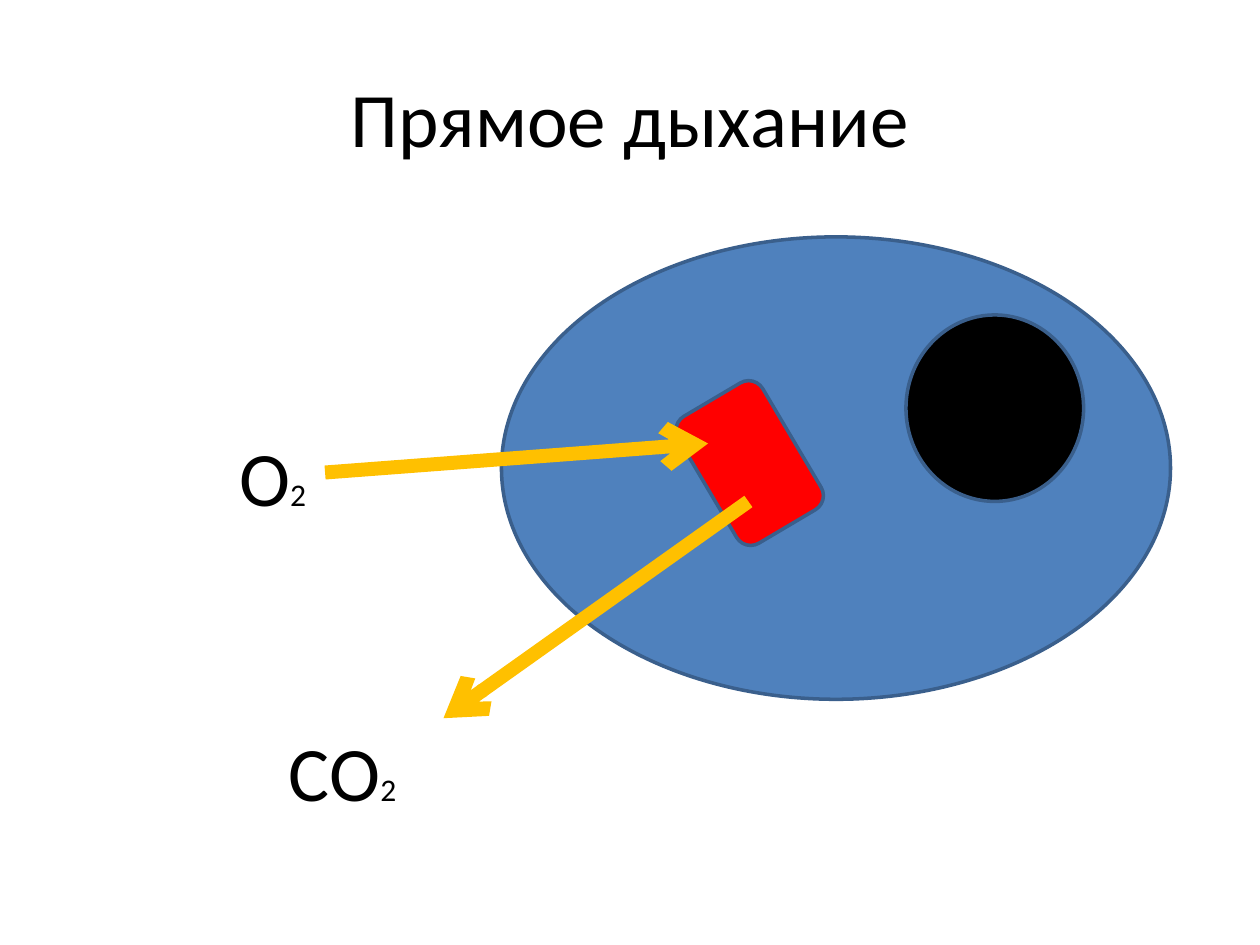
"""Build a slide showing direct respiration of a cell."""
from lxml import etree
from pptx import Presentation, util as u
from pptx.dml.color import RGBColor
from pptx.enum import shapes, text
from pptx.oxml.ns import qn

BLACK = RGBColor(0x00, 0x00, 0x00)
BLUE = RGBColor(0x4F, 0x81, 0xBD)
EDGE = RGBColor(0x3A, 0x5F, 0x8C)
RED = RGBColor(0xFF, 0x00, 0x00)
AMBER = RGBColor(0xFF, 0xC0, 0x00)

prs = Presentation()
prs.slide_width, prs.slide_height = u.Inches(10), u.Inches(7.5)
COL, ROW = prs.slide_width / 100, prs.slide_height / 100
s = prs.slides.add_slide(prs.slide_layouts[5])


def grid(x, y, x2, y2):
    return [round(n) for n in (x * COL, y * ROW, x2 * COL, y2 * ROW)]


def add_run(p, words, size):
    r = p.add_run()
    r.text = words
    for key, value in {"name": "Calibri", "size": u.Pt(size)}.items():
        setattr(r.font, key, value)
    r.font.color.rgb = BLACK


title = s.shapes.title
title.left, title.top, title.width, title.height = grid(5, 4, 90, 16.67)
title.text_frame.vertical_anchor = text.MSO_ANCHOR.MIDDLE
p = title.text_frame.paragraphs[0]
p.alignment = text.PP_ALIGN.CENTER
add_run(p, "Прямое дыхание", 44)

OVAL, ROUNDED = shapes.MSO_SHAPE.OVAL, shapes.MSO_SHAPE.ROUNDED_RECTANGLE
for kind, place, fill, turn in [
    (OVAL, (39.8, 25.07, 53.1, 48.93), BLUE, 0),
    (OVAL, (71.9, 33.33, 14.1, 19.73), BLACK, 0),
    (ROUNDED, (55.6, 41.2, 7.8, 15.6), RED, 329.4),
]:
    sp = s.shapes.add_shape(kind, *grid(*place))
    sp.rotation = turn
    sp.shadow.inherit = False
    sp.fill.solid()
    sp.fill.fore_color.rgb = fill
    sp.line.color.rgb = EDGE
    sp.line.width = u.Pt(2)

for ends in [(25.8, 50, 56.2, 46.93), (59.4, 53.07, 35.2, 76)]:
    sp = s.shapes.add_connector(shapes.MSO_CONNECTOR.STRAIGHT, *grid(*ends))
    sp.line.color.rgb = AMBER
    sp.line.width = u.Pt(8)
    props = sp._element.spPr
    etree.SubElement(props.find(qn("a:ln")), qn("a:tailEnd"), type="arrow")
    etree.SubElement(props, qn("a:effectLst"))

FRAME = {"word_wrap": True, "auto_size": text.MSO_AUTO_SIZE.SHAPE_TO_FIT_TEXT}
for symbol, place in [
    ("О", (18, 44.8, 8.6, 11.2)),
    ("СО", (21.9, 76, 12.5, 11.2)),
]:
    tf = s.shapes.add_textbox(*grid(*place)).text_frame
    for key, value in FRAME.items():
        setattr(tf, key, value)
    p = tf.paragraphs[0]
    add_run(p, symbol, 44)
    add_run(p, "2", 18)

prs.save("out.pptx")
